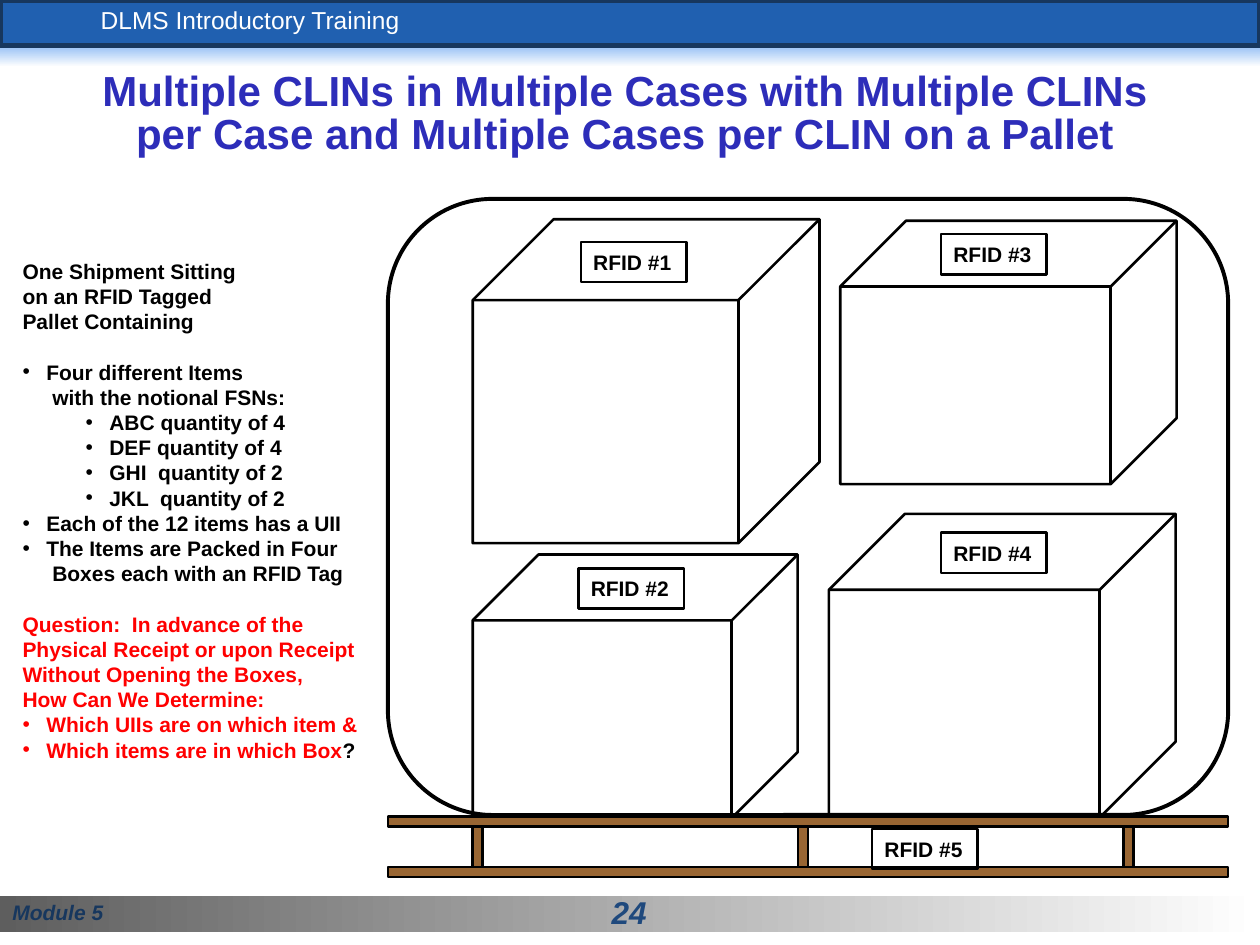
"""Build the slide on RFID tagged cases packed on one pallet."""
from lxml import etree
from pptx import Presentation
from pptx import util as u
from pptx.dml import color
from pptx.enum import shapes, text
from pptx.oxml import ns

KIND = shapes.MSO_SHAPE
ANCHOR = text.MSO_ANCHOR
BLACK, RED, NAVY, BROWN = "000000", "FF0000", "17375E", "996633"


def write(para, words, size=12, hue=BLACK, **look):
    span = para.add_run()
    span.text = words
    span.font.color.rgb = color.RGBColor.from_string(hue)
    for name, value in {"name": "Arial", "size": u.Pt(size), "bold": True, **look}.items():
        setattr(span.font, name, value)


def add_box(kind, place, fill=None, line=None, width=1.5):
    box = page.shapes.add_shape(kind, *map(u.Cm, place))
    box.shadow.inherit = False
    if isinstance(fill, tuple):
        box.fill.gradient()
        box.fill.gradient_angle = fill[0]
        for stop, hue in zip(box.fill.gradient_stops, fill[1:]):
            stop.color.rgb = color.RGBColor.from_string(hue)
    elif fill:
        box.fill.solid()
        box.fill.fore_color.rgb = color.RGBColor.from_string(fill)
    else:
        box.fill.background()
    if line:
        box.line.color.rgb = color.RGBColor.from_string(line)
        box.line.width = u.Pt(width)
    else:
        box.line.fill.background()
    frame = box.text_frame
    frame.vertical_anchor = ANCHOR.MIDDLE
    frame.paragraphs[0].alignment = text.PP_ALIGN.LEFT
    return box


deck = Presentation()
deck.slide_width, deck.slide_height = u.Cm(25.4), u.Cm(19.05)
page = deck.slides.add_slide(deck.slide_layouts[1])

footer = add_box(KIND.RECTANGLE, (0, 18.06, 25.4, 0.72), (0, "5E5E5E", "FFFFFF"))
add_box(KIND.RECTANGLE, (0, 0.95, 25.4, 0.4), (270, "9CC3F5", "FFFFFF"))
add_box(KIND.RECTANGLE, (0, 0, 25.4, 0.92), "2060B0", NAVY, 3)
header = add_box(KIND.RECTANGLE, (1.78, 0.05, 11.76, 0.76))
number = add_box(KIND.RECTANGLE, (12.06, 17.93, 1.25, 1))
number.text_frame.word_wrap = False
number.text_frame.paragraphs[0].alignment = text.PP_ALIGN.CENTER
for box, words, size, hue, strong in [
    (footer, "Module 5", 12, NAVY, True),
    (number, "24", 18, "1F497D", True),
    (header, "DLMS Introductory Training", 14, "FFFFFF", False),
]:
    para = box.text_frame.paragraphs[0]
    para.line_spacing = 0.9
    write(para, words, size, hue, bold=strong, italic=strong)

title, body = page.placeholders
for holder, place, anchor in [
    (title, (1.27, 1.27, 22.66, 2.11), ANCHOR.MIDDLE),
    (body, (0.2, 5.08, 9.53, 11.96), ANCHOR.TOP),
]:
    holder.left, holder.top, holder.width, holder.height = map(u.Cm, place)
    frame_format = {"word_wrap": True, "auto_size": text.MSO_AUTO_SIZE.NONE, "vertical_anchor": anchor}
    for name, value in frame_format.items():
        setattr(holder.text_frame, name, value)

para = title.text_frame.paragraphs[0]
para.alignment = text.PP_ALIGN.CENTER
para.line_spacing = 0.85
write(para, "Multiple CLINs in Multiple Cases with Multiple CLINs "
            "per Case and Multiple Cases per CLIN on a Pallet", 24, "2D2DB9")

styles = {"plain": (0, 0), "more": (0.6, 0), "item": (0.48, -0.48), "sub": (1.75, -0.48)}
lines = [
    ("plain", "One Shipment Sitting", BLACK, 0),
    ("plain", "on an RFID Tagged", BLACK, 0),
    ("plain", "Pallet Containing", BLACK, 0),
    ("item", "Four different Items", BLACK, 14.4),
    ("more", "with the notional FSNs:", BLACK, 0),
    ("sub", "ABC quantity of 4", BLACK, 0),
    ("sub", "DEF quantity of 4", BLACK, 0),
    ("sub", "GHI  quantity of 2", BLACK, 0),
    ("sub", "JKL  quantity of 2", BLACK, 0),
    ("item", "Each of the 12 items has a UII", BLACK, 0),
    ("item", "The Items are Packed in Four", BLACK, 0),
    ("more", "Boxes each with an RFID Tag", BLACK, 0),
    ("plain", "Question:  In advance of the", RED, 14.4),
    ("plain", "Physical Receipt or upon Receipt", RED, 0),
    ("plain", "Without Opening the Boxes,", RED, 0),
    ("plain", "How Can We Determine:", RED, 0),
    ("item", "Which UIIs are on which item &", RED, 0),
    ("item", "Which items are in which Box", RED, 0),
]
for index, (style, words, hue, gap) in enumerate(lines):
    frame = body.text_frame
    para = frame.add_paragraph() if index else frame.paragraphs[0]
    para.level = int(style == "sub")
    margin, indent = styles[style]
    props = para._p.get_or_add_pPr()
    props.set("marL", str(u.Cm(margin)))
    props.set("indent", str(u.Cm(indent)))
    if indent:
        etree.SubElement(props, ns.qn("a:buFont")).set("typeface", "Arial")
        etree.SubElement(props, ns.qn("a:buChar")).set("char", "•")
    else:
        etree.SubElement(props, ns.qn("a:buNone"))
    para.space_before = u.Pt(gap)
    write(para, words, 12, hue)
write(para, "?")

cubes = [
    (9.53, 4.42, 6.99, 6.53),
    (16.94, 4.45, 6.78, 5.31),
    (9.53, 11.18, 6.55, 5.31),
    (16.71, 10.36, 6.99, 6.12),
]
for place in cubes:
    add_box(KIND.CUBE, place, None, BLACK)

for top in (16.46, 17.48):
    add_box(KIND.RECTANGLE, (7.82, top, 16.94, 0.2), BROWN, BLACK)
for column in range(3):
    add_box(KIND.RECTANGLE, (9.53 + 6.56 * column, 16.66, 0.2, 0.82), BROWN, BLACK)
wrapping = add_box(KIND.ROUNDED_RECTANGLE, (7.82, 4.01, 16.94, 12.42), None, BLACK, 2.25)
wrapping.adjustments[0] = 0.17

labels = [(11.71, 4.88), (11.66, 11.46), (18.97, 4.72), (18.97, 10.74), (17.58, 16.71)]
for tag, (left, top) in enumerate(labels, 1):
    label = add_box(KIND.RECTANGLE, (left, top, 2.13, 0.81), None, BLACK)
    label.text_frame.word_wrap = False
    write(label.text_frame.paragraphs[0], f"RFID #{tag}")

deck.save("out.pptx")
